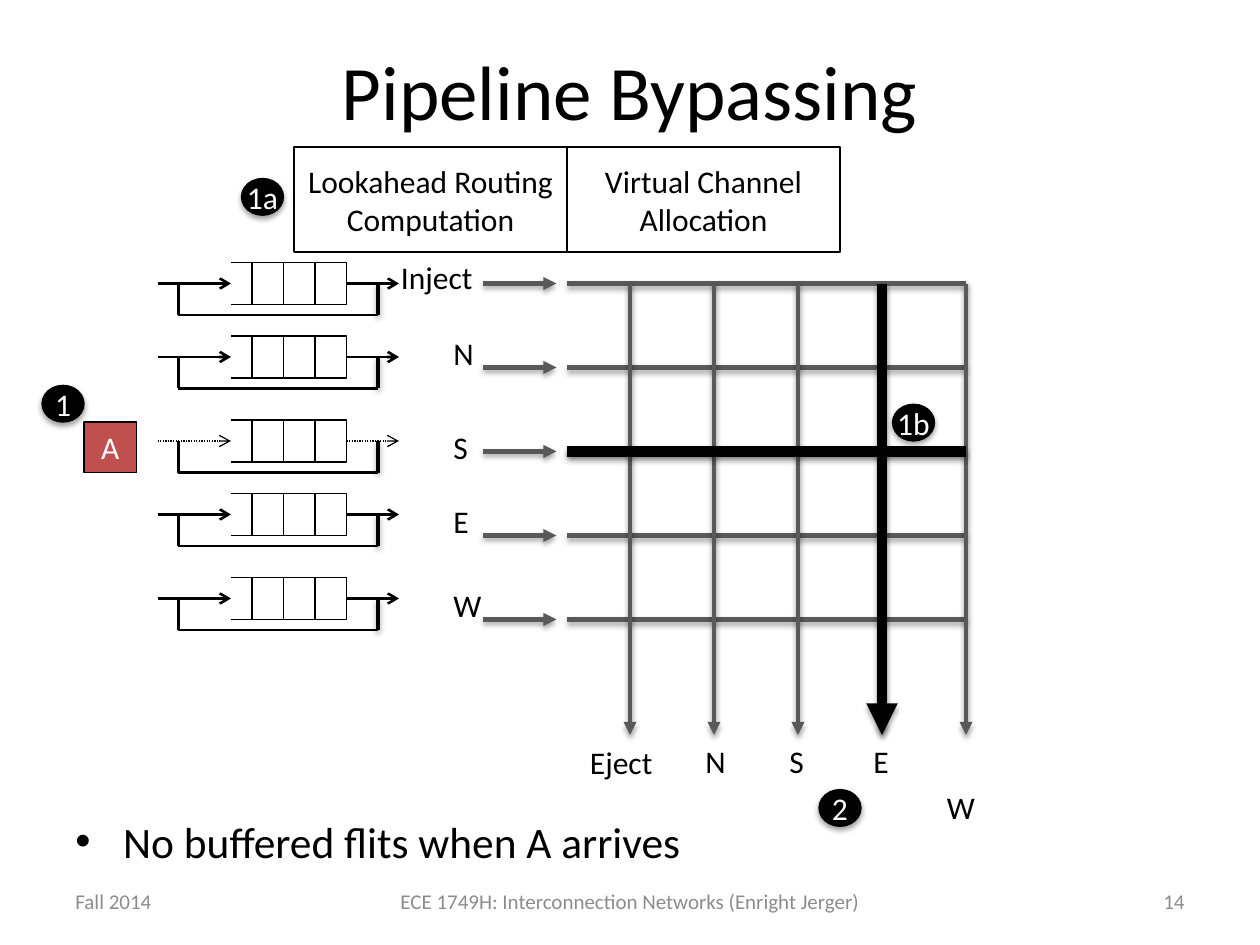
"""Build the Pipeline Bypassing slide: router queues feeding a crossbar with a bypass path."""
from pptx import Presentation
from pptx.dml.color import RGBColor
from pptx.enum.dml import MSO_LINE
from pptx.enum.shapes import MSO_CONNECTOR, MSO_SHAPE
from pptx.enum.text import MSO_ANCHOR, PP_ALIGN
from pptx.oxml import parse_xml
from pptx.oxml.ns import nsdecls
from pptx.util import Inches, Pt

COLORS = {"black": "000000", "white": "FFFFFF", "wire": "595959", "flit": "C0504D", "footer": "8C8C8C"}
EFFECTS = {
    False: f"<a:effectLst {nsdecls('a')}/>",
    True: f'<a:effectLst {nsdecls("a")}><a:outerShdw blurRad="39370" dist="21590" dir="5400000" rotWithShape="0">'
          '<a:srgbClr val="000000"><a:alpha val="37000"/></a:srgbClr></a:outerShdw></a:effectLst>',
}
LEFT, CENTER, RIGHT = PP_ALIGN.LEFT, PP_ALIGN.CENTER, PP_ALIGN.RIGHT
TOP, MIDDLE = MSO_ANCHOR.TOP, MSO_ANCHOR.MIDDLE
RECTANGLE, OVAL = MSO_SHAPE.RECTANGLE, MSO_SHAPE.OVAL

presentation = Presentation()
presentation.slide_width, presentation.slide_height = Inches(10), Inches(7.5)
slide = presentation.slides.add_slide(presentation.slide_layouts[6])
UNIT = presentation.slide_width / 120


def draw_line(start, end, color="black", width=1.5, arrow=None, shadow=False, dotted=False):
    ends = [int(value * UNIT) for value in (*start, *end)]
    connector = slide.shapes.add_connector(MSO_CONNECTOR.STRAIGHT, *ends)
    connector.line.color.rgb = RGBColor.from_string(COLORS[color])
    connector.line.width = Pt(width)
    if dotted:
        connector.line.dash_style = MSO_LINE.ROUND_DOT
    if arrow:
        connector.line._get_or_add_ln().append(parse_xml(f'<a:tailEnd {nsdecls("a")} type="{arrow}"/>'))
    connector._element.spPr.append(parse_xml(EFFECTS[shadow]))
    return connector


def draw_box(bounds, text="", kind=None, size=18, color="black", fill=None,
             align=LEFT, anchor=TOP, shadow=False, wrap=True):
    bounds = [int(value * UNIT) for value in bounds]
    if kind is None:
        shape = slide.shapes.add_textbox(*bounds)
    else:
        shape = slide.shapes.add_shape(kind, *bounds)
        shape.line.color.rgb = RGBColor.from_string(COLORS["black"])
        shape.line.width = Pt(0.75)
        if fill:
            shape.fill.solid()
            shape.fill.fore_color.rgb = RGBColor.from_string(COLORS[fill])
        else:
            shape.fill.background()
        shape._element.spPr.append(parse_xml(EFFECTS[shadow]))
    frame = shape.text_frame
    frame.word_wrap, frame.vertical_anchor = wrap, anchor
    frame.text = text
    paragraph = frame.paragraphs[0]
    paragraph.alignment = align
    for run in paragraph.runs:
        run.font.name, run.font.size = "Calibri", Pt(size)
        run.font.color.rgb = RGBColor.from_string(COLORS[color])
    return shape


draw_box((6, 1, 108, 15), "Pipeline Bypassing", size=44, align=CENTER, anchor=MIDDLE)

crossbar_left, crossbar_right, crossbar_top, output_end = 54, 92, 27, 70
input_rows = [crossbar_top + 8 * index for index in range(5)]
output_columns = [60 + 8 * index for index in range(5)]
for row in input_rows:
    draw_line((crossbar_left, row), (crossbar_right, row), "wire", 2.5, shadow=True)
    draw_line((46, row), (53, row), "wire", 2.5, "triangle", True)
for column in output_columns:
    draw_line((column, crossbar_top), (column, output_end), "wire", 2.5, "triangle", True)
bypass_row, bypass_column = input_rows[2], output_columns[3]
draw_line((bypass_column, crossbar_top), (bypass_column, output_end), width=6, arrow="triangle", shadow=True)
draw_line((crossbar_left, bypass_row), (crossbar_right, bypass_row), width=6, shadow=True)

port_labels = [
    ("Inject", 37, 24, 10), ("N", 42, 31.2, 5), ("S", 42, 40.2, 5), ("E", 42, 47.2, 5), ("W", 42, 55.2, 5),
    ("Eject", 55, 70.2, 10), ("N", 66, 70.1, 5), ("S", 74, 70.1, 5), ("E", 82, 70.1, 9), ("W", 89, 74.5, 5),
]
for label, left, top, width in port_labels:
    draw_box((left, top, width, 4.8), label)

for row in (27, 34, 42, 49, 57):
    empty = row == 42
    flow = {"width": 0.75 if empty else 1.5, "arrow": "arrow", "dotted": empty}
    for column in (24, 27, 30):
        cell = draw_box((column, row - 2, 3, 4), kind=RECTANGLE)
    for edge in (row - 2, row + 2):
        draw_line((24, edge), (22, edge), width=0.75)
    draw_line((15, row), (22, row), **flow)
    outlet = draw_line((33, row), (38, row), **flow)
    outlet.begin_connect(cell, 3)
    draw_line((17, row + 3), (17, row))
    draw_line((36, row + 3), (17, row + 3))
    draw_line((36, row + 3), (36, row), width=2, shadow=True)

for stage, left in (("Lookahead Routing Computation", 28), ("Virtual Channel Allocation", 54)):
    draw_box((left, 14, 26, 10), stage, RECTANGLE, align=CENTER, anchor=MIDDLE)
draw_box((8, 40.2, 5, 4.8), "A", RECTANGLE, color="white", fill="flit", align=CENTER, anchor=MIDDLE)
for step, left, top in (("1a", 23, 17), ("1", 4, 36.7), ("1b", 85, 38.5), ("2", 78, 75.2)):
    draw_box((left, top, 4, 3.5), step, OVAL, color="white", fill="black",
             align=CENTER, anchor=MIDDLE, shadow=True, wrap=False)

remark = draw_box((6, 77, 108, 5.4), "No buffered flits when A arrives", size=24.8)
paragraph = remark.text_frame.paragraphs[0]
paragraph.space_before = Pt(5)
properties = paragraph._p.get_or_add_pPr()
properties.set("marL", str(Inches(0.38)))
properties.set("indent", str(-Inches(0.38)))
properties.append(parse_xml(f'<a:buFont {nsdecls("a")} typeface="Arial"/>'))
properties.append(parse_xml(f'<a:buChar {nsdecls("a")} char="•"/>'))

footers = [
    ("Fall 2014", 6, 28, LEFT),
    ("ECE 1749H: Interconnection Networks (Enright Jerger)", 34, 52, CENTER),
    ("14", 86, 28, RIGHT),
]
for text, left, width, align in footers:
    draw_box((left, 83.4, width, 4.8), text, size=12, color="footer", align=align, anchor=MIDDLE)

presentation.save("out.pptx")
